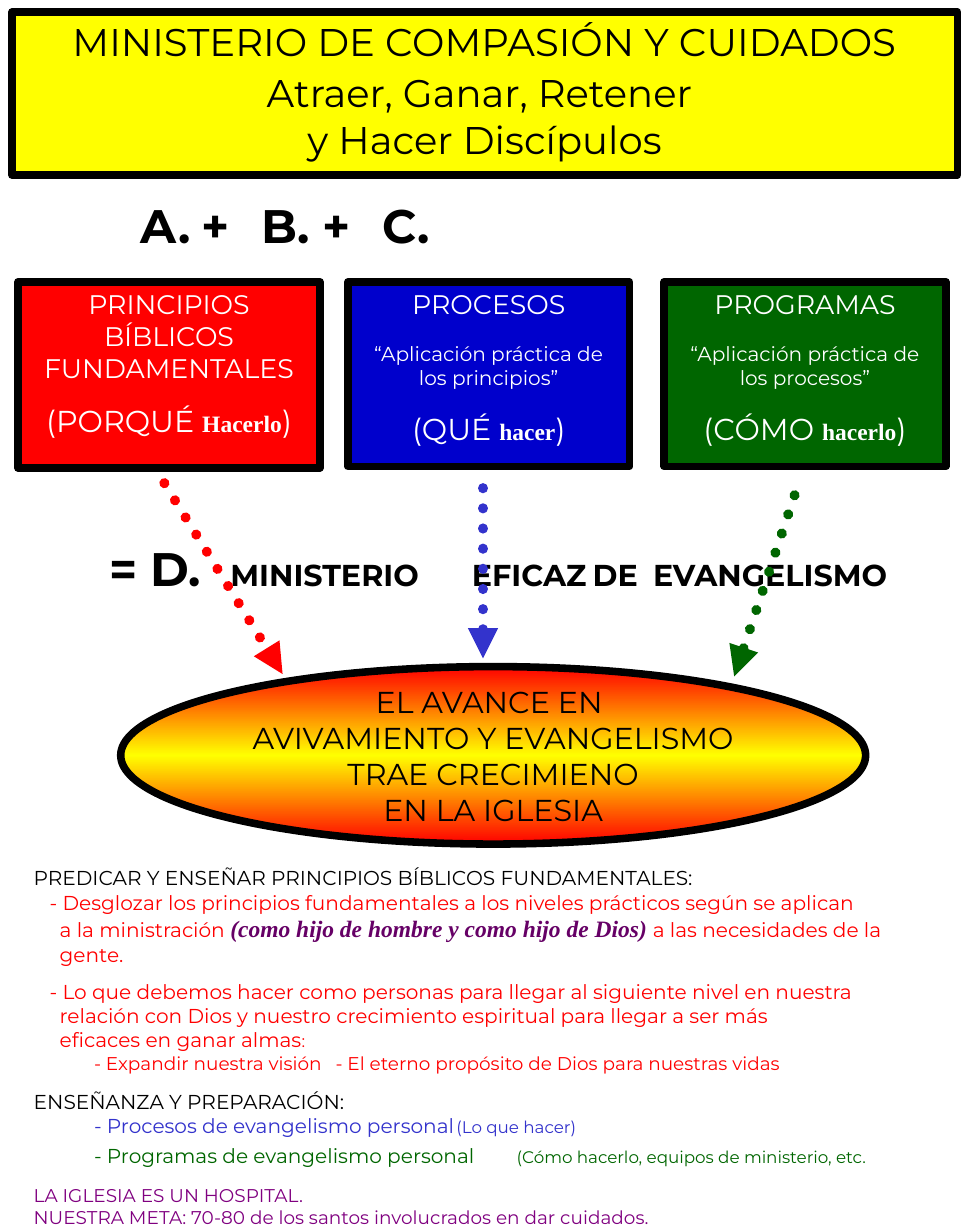
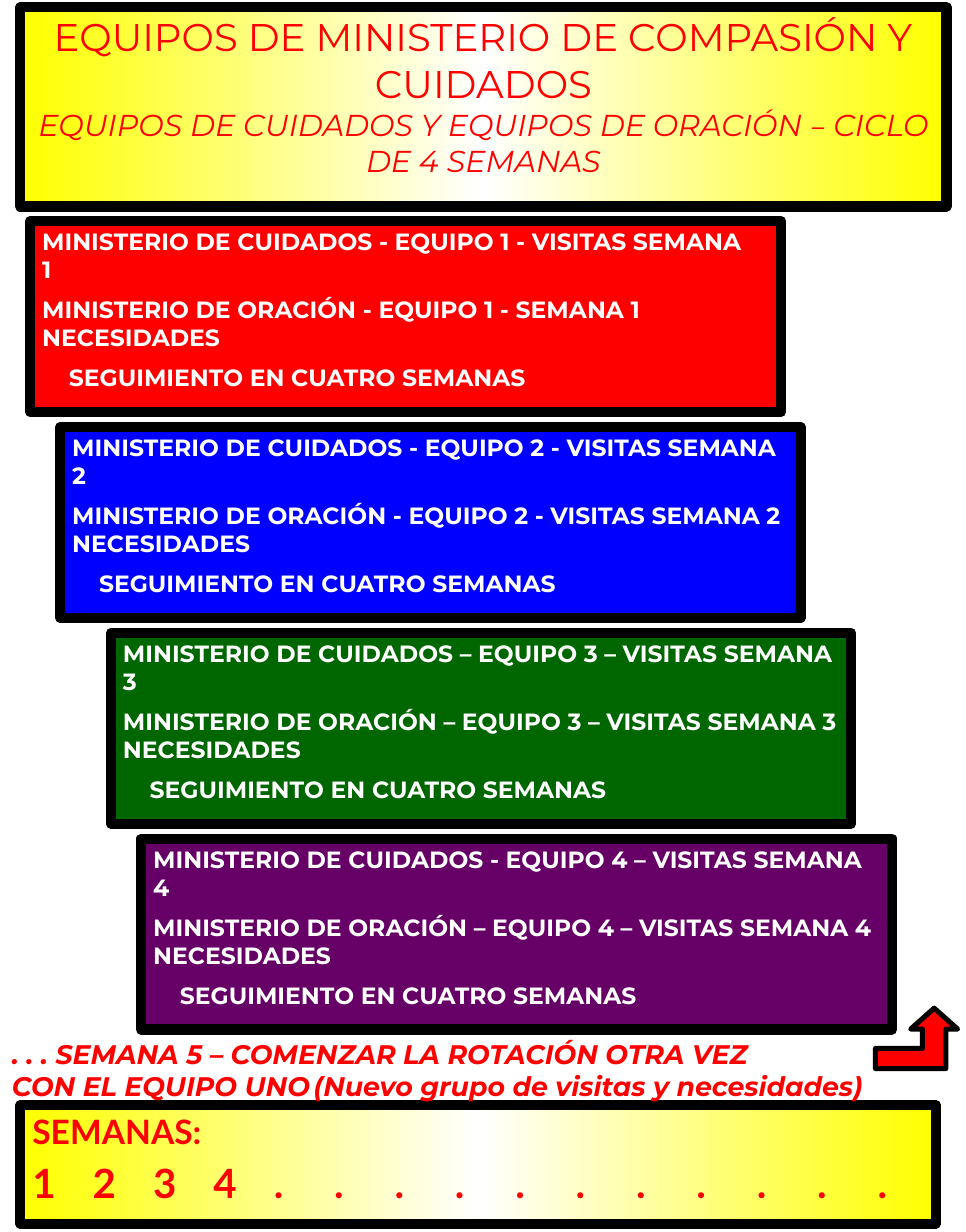
from copy import deepcopy
from dataclasses import dataclass, replace

from pptx import Presentation
from pptx.dml.color import RGBColor
from pptx.enum.dml import MSO_LINE
from pptx.enum.shapes import MSO_CONNECTOR, MSO_SHAPE
from pptx.enum.text import MSO_ANCHOR, MSO_AUTO_SIZE, PP_ALIGN
from pptx.oxml.ns import qn
from pptx.util import Pt
from lxml.etree import SubElement

COLORS = {
    "black": "000000", "white": "FFFFFF", "yellow": "FFFF00", "red": "FF0000",
    "navy": "0000CC", "blue": "0000FF", "indigo": "3333CC", "green": "006600",
    "plum": "660066", "purple": "800080",
}
CENTER = PP_ALIGN.CENTER
TITLE_ONLY = 5


@dataclass(frozen=True)
class Style:
    size: float
    color: str = "black"
    font: str = "Montserrat"
    bold: bool = False
    italic: bool = False


def rgb(name):
    return RGBColor.from_string(COLORS[name])


def format_run(run, style):
    font = run.font
    font.size, font.name = Pt(style.size), style.font
    font.bold, font.italic = style.bold, style.italic
    font.color.rgb = rgb(style.color)


def add_line(frame, *spans, before=0, align=PP_ALIGN.LEFT, indent=0, tabs=()):
    """Add a paragraph of (text, Style) spans; a vertical tab breaks the line."""
    para = frame.paragraphs[0]
    if para.runs:
        para = frame.add_paragraph()
    para.alignment, para.space_before = align, Pt(before)
    for text, style in spans:
        for number, part in enumerate(text.split("\v")):
            if number:
                para.add_line_break()
            run = para.add_run()
            run.text = part
            format_run(run, style)
    for line_break in para._p.findall(qn("a:br")):
        line_break.append(deepcopy(para.runs[0]._r.rPr))
    properties = para._p.get_or_add_pPr()
    properties.set("marL", str(Pt(indent)))
    properties.set("indent", "0")
    if tabs:
        tab_list = SubElement(properties, qn("a:tabLst"))
        for position in tabs:
            SubElement(tab_list, qn("a:tab"), pos=str(Pt(position)), algn="l")


def prepare_frame(shape, anchor=MSO_ANCHOR.TOP, wrap=True):
    frame = shape.text_frame
    frame.auto_size = MSO_AUTO_SIZE.NONE
    frame.word_wrap, frame.vertical_anchor = wrap, anchor
    return frame


def paint(shape, fill, border):
    """Fill with one colour, or mirror a gradient from (edge, middle, angle)."""
    if isinstance(fill, str):
        shape.fill.solid()
        shape.fill.fore_color.rgb = rgb(fill)
    else:
        edge, middle, angle = fill
        shape.fill.gradient()
        shape.fill.gradient_angle = angle
        stop_list = shape._element.spPr.find(qn("a:gradFill")).find(qn("a:gsLst"))
        stop_list.append(deepcopy(stop_list[0]))
        for stop, color, place in zip(shape.fill.gradient_stops,
                                      (edge, middle, edge), (0, 0.5, 1)):
            stop.color.rgb, stop.position = rgb(color), place
    shape.line.color.rgb = rgb("black")
    shape.line.width = Pt(border)


def add_title_band(page, place, fill, border):
    title = page.shapes.title
    title.left, title.top, title.width, title.height = map(Pt, place)
    paint(title, fill, border)
    return prepare_frame(title)


def add_panel(page, place, fill, border, kind=MSO_SHAPE.RECTANGLE, **frame_options):
    panel = page.shapes.add_shape(kind, *map(Pt, place))
    panel.shadow.inherit = False
    paint(panel, fill, border)
    return prepare_frame(panel, **frame_options)


def add_text(page, place):
    return prepare_frame(page.shapes.add_textbox(*map(Pt, place)))


def add_dotted_arrow(page, start, end, color):
    arrow = page.shapes.add_connector(MSO_CONNECTOR.STRAIGHT, *map(Pt, start + end))
    arrow.line.color.rgb = rgb(color)
    arrow.line.width = Pt(6)
    arrow.line.dash_style = MSO_LINE.ROUND_DOT
    outline = arrow.line._get_or_add_ln()
    outline.set("cap", "rnd")
    SubElement(outline, qn("a:tailEnd"), type="triangle")
    SubElement(arrow._element.spPr, qn("a:effectLst"))


def add_turn_arrow(page):
    points = [(557, 601), (543, 613.5), (550, 613.5), (550, 625), (522, 625),
              (522, 637), (564, 637), (564, 613.5), (571, 613.5)]
    builder = page.shapes.build_freeform(Pt(points[0][0]), Pt(points[0][1]))
    builder.add_line_segments([(Pt(x), Pt(y)) for x, y in points[1:]], close=True)
    arrow = builder.convert_to_shape()
    arrow.shadow.inherit = False
    paint(arrow, "red", 3)


def add_pillar(page, place, fill, heading, question, verb, application=None):
    frame = add_panel(page, place, fill, 4.5)
    large = Style(18, "white")
    add_line(frame, (heading, Style(16, "white")), align=CENTER)
    if application:
        add_line(frame, (application, Style(12, "white")), before=12.5, align=CENTER)
    add_line(frame, (f"({question} ", large),
             (verb, Style(14, "white", "Times New Roman", True)), (")", large),
             before=12.5 if application else 10.5, align=CENTER)


def add_teaching_notes(page):
    frame = add_text(page, (13, 512.6, 563, 221.8))
    plain, red = Style(12), Style(12, "red")
    indigo, green = Style(12, "indigo"), Style(12, "green")
    dash, hang = 9.5, 15.5
    add_line(frame, ("PREDICAR Y ENSEÑAR PRINCIPIOS BÍBLICOS FUNDAMENTALES:", plain))
    add_line(frame, ("- Desglozar los principios fundamentales a los niveles "
                     "prácticos según se aplican", red), indent=dash)
    add_line(frame, ("a la ministración ", red),
             ("(como hijo de hombre y como hijo de Dios)",
              Style(14, "plum", "Times New Roman", True, True)),
             (" a las necesidades de la", red), indent=hang)
    add_line(frame, ("gente.", red), indent=hang)
    add_line(frame, ("- Lo que debemos hacer como personas para llegar al "
                     "siguiente nivel en nuestra", red), before=7.5, indent=dash)
    add_line(frame, ("relación con Dios y nuestro crecimiento espiritual para "
                     "llegar a ser más", red), indent=hang)
    add_line(frame, ("eficaces en ganar almas", red), (":", replace(red, size=10)),
             indent=hang)
    add_line(frame, ("\t- Expandir nuestra visión\t- El eterno propósito de Dios "
                     "para nuestras vidas", replace(red, size=11)), tabs=(66.8, 216.4))
    add_line(frame, ("ENSEÑANZA Y PREPARACIÓN:", plain), before=9.5)
    add_line(frame, ("\t- Procesos de evangelismo personal", indigo),
             ("\t(Lo que hacer)", replace(indigo, size=10)), tabs=(dash, 239.7))
    add_line(frame, ("\t- Programas de evangelismo personal", green),
             ("\t(Cómo hacerlo, equipos de ministerio, etc.", replace(green, size=10)),
             before=3.5, tabs=(10, 242.6))
    purple = Style(11, "purple")
    add_line(frame, ("LA IGLESIA ES UN HOSPITAL.", purple), before=9.5)
    add_line(frame, ("NUESTRA META: 70-80 de los santos involucrados en dar cuidados.",
                     purple))


def build_compassion_page(page):
    frame = add_title_band(page, (7.2, 7.2, 563.8, 97.2), "yellow", 4.5)
    for text, before in (("MINISTERIO DE COMPASIÓN Y CUIDADOS", 0),
                         ("Atraer, Ganar, Retener ", 3), ("y Hacer Discípulos", 0)):
        add_line(frame, (text, Style(23)), before=before, align=CENTER)

    add_pillar(page, (10.8, 168, 180, 111), "red",
               "PRINCIPIOS BÍBLICOS FUNDAMENTALES", "PORQUÉ", "Hacerlo")
    add_pillar(page, (207.4, 168, 168, 110), "navy", "PROCESOS", "QUÉ", "hacer",
               "“Aplicación práctica de los principios”")
    add_pillar(page, (396, 168, 168, 110), "green", "PROGRAMAS", "CÓMO", "hacerlo",
               "“Aplicación práctica de los procesos”")

    big = Style(28, bold=True)
    add_line(add_text(page, (77, 113.8, 437, 40.3)), ("A.\t+\tB.\t+\tC.", big),
             tabs=(85, 165, 248.5, 328.5))
    add_line(add_text(page, (58.3, 318.2, 517.7, 41)), ("= D.", big),
             ("\tMINISTERIO\tEFICAZ\tDE\tEVANGELISMO", replace(big, size=18)),
             tabs=(67.5, 189.5, 268, 305))

    frame = add_panel(page, (72, 397.4, 444.2, 105.8), ("red", "yellow", 90), 4.5,
                      MSO_SHAPE.OVAL, anchor=MSO_ANCHOR.MIDDLE, wrap=False)
    for text in ("EL AVANCE EN ", "AVIVAMIENTO Y EVANGELISMO",
                 " TRAE CRECIMIENO ", "EN LA IGLESIA"):
        add_line(frame, (text, Style(18)), align=CENTER)

    add_teaching_notes(page)
    add_dotted_arrow(page, (98, 288), (168.5, 401.8), "red")
    add_dotted_arrow(page, (473.8, 295.2), (437.8, 403.2), "green")
    add_dotted_arrow(page, (288, 291), (288, 392.4), "indigo")


def add_team(page, number, left, width, fill, first_dash, dash, prayer_visit="VISITAS "):
    frame = add_panel(page, (left, 131.8 + 122.7 * (number - 1), width, 113.8), fill, 6)
    style = Style(14, "white", bold=True)
    add_line(frame, (f"MINISTERIO DE CUIDADOS {first_dash} EQUIPO {number} {dash} "
                     f"VISITAS SEMANA\v{number}", style))
    add_line(frame, (f"MINISTERIO DE ORACIÓN {dash} EQUIPO {number} {dash} "
                     f"{prayer_visit}SEMANA {number}\vNECESIDADES", style), before=7)
    add_line(frame, ("SEGUIMIENTO EN CUATRO SEMANAS", style), before=7, indent=16)


def build_teams_page(page):
    glow = ("yellow", "white", 0)
    frame = add_title_band(page, (12.2, 4.3, 552.2, 118.8), glow, 6)
    subtitle = Style(18, "red", italic=True)
    add_line(frame, ("EQUIPOS DE MINISTERIO DE COMPASIÓN Y CUIDADOS", Style(23, "red")),
             align=CENTER)
    add_line(frame, ("EQUIPOS DE CUIDADOS Y EQUIPOS DE ORACIÓN ", subtitle),
             ("–", replace(subtitle, font="Cambria")),
             (" CICLO DE 4 SEMANAS", subtitle), align=CENTER)

    add_team(page, 1, 18, 447.8, "red", "-", "-", prayer_visit="")
    add_team(page, 2, 36, 441.4, "blue", "-", "-")
    add_team(page, 3, 66.2, 441.4, "green", "–", "–")
    add_team(page, 4, 84.2, 447.8, "plum", "-", "–")

    frame = add_panel(page, (12.2, 658.8, 545.8, 70.6), glow, 6)
    weeks = Style(24, "red", "Lato", True)
    add_line(frame, ("SEMANAS:", replace(weeks, size=20)))
    week_tabs = [37 * step for step in (1, 2, 3)]
    dot_tabs = [152] + [181 + 23.2 * step for step in range(10)]
    add_line(frame, ("\t".join(["1", "2", "3", "4"] + ["."] * len(dot_tabs)), weeks),
             before=4, tabs=week_tabs + dot_tabs)

    frame = add_text(page, (0, 614.9, 576, 46))
    restart = Style(16, "red", bold=True, italic=True)
    add_line(frame, (". . . SEMANA 5 – COMENZAR LA ROTACIÓN OTRA VEZ", restart))
    add_line(frame, ("CON EL EQUIPO UNO\t(Nuevo grupo de visitas y necesidades)", restart),
             tabs=(191,))
    add_turn_arrow(page)


def main():
    deck = Presentation()
    deck.slide_width, deck.slide_height = Pt(576), Pt(734.4)
    for build in (build_compassion_page, build_teams_page):
        build(deck.slides.add_slide(deck.slide_layouts[TITLE_ONLY]))
    deck.save("out.pptx")


if __name__ == "__main__":
    main()
